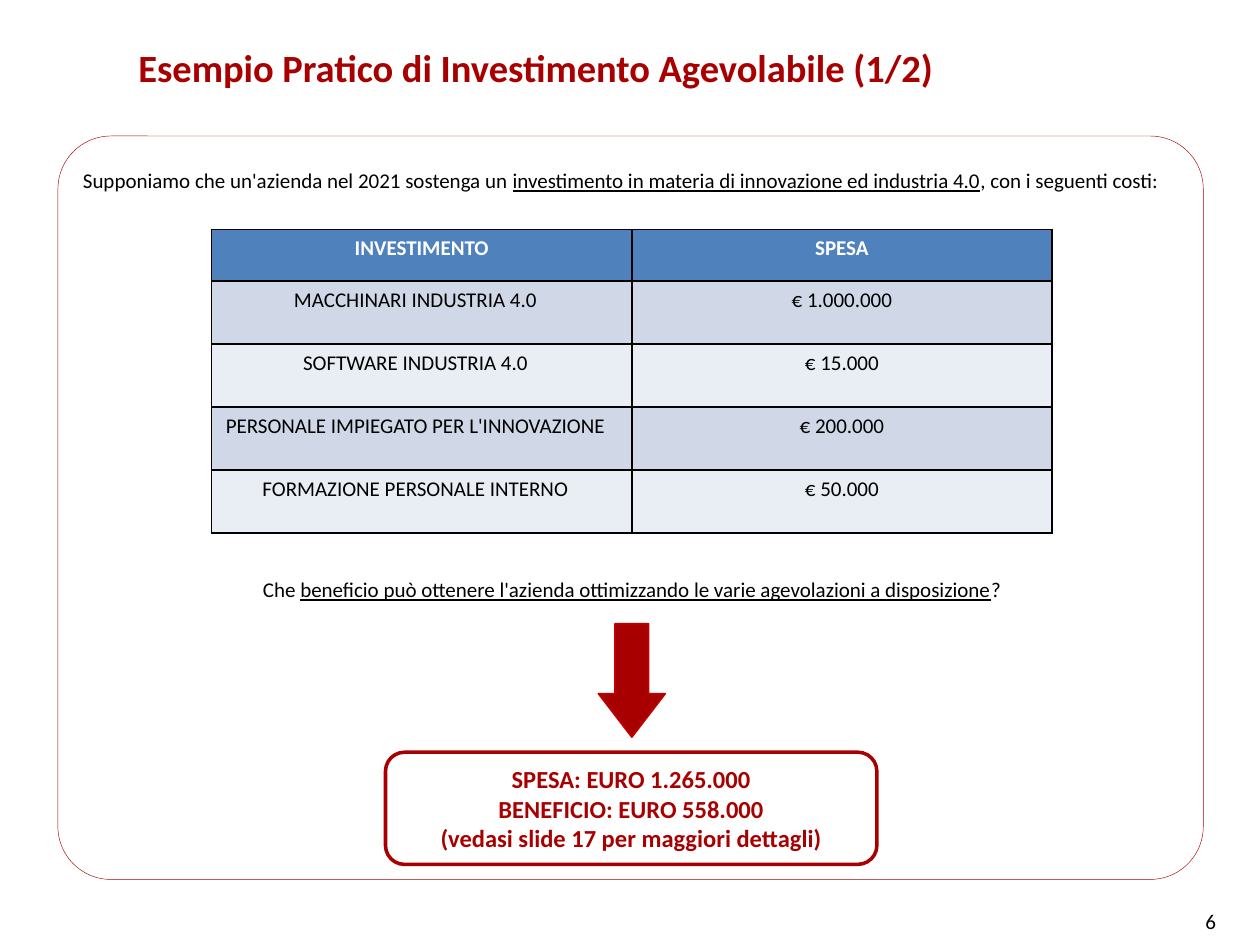
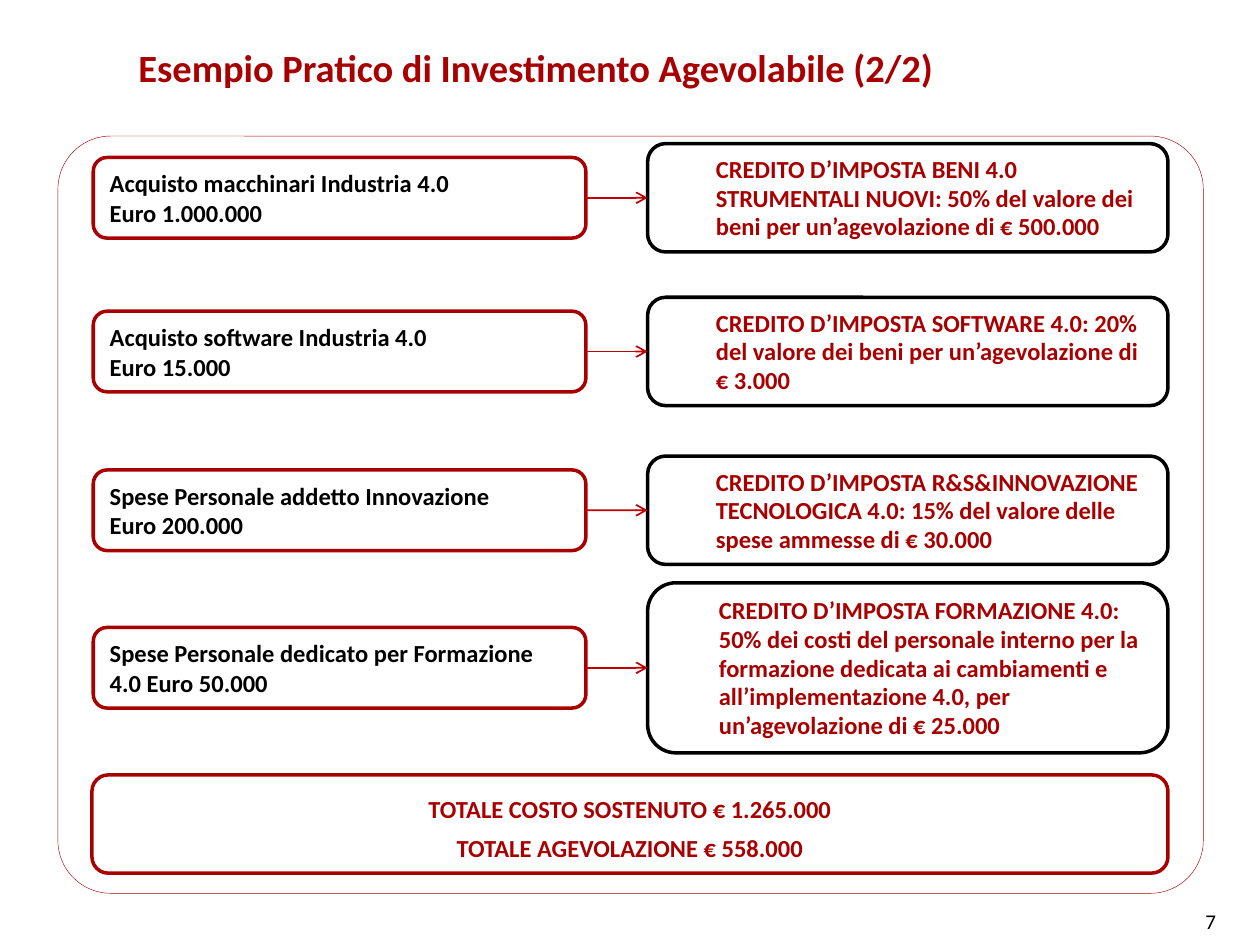
from lxml import etree
from pptx import Presentation
from pptx.dml.color import RGBColor
from pptx.enum import shapes, text
from pptx.oxml import ns
from pptx.util import Inches, Pt

FONT = "Calibri"
RED = RGBColor(0xA8, 0x00, 0x00)
ARROW_RED = RGBColor(0xC0, 0x00, 0x00)
BLACK = RGBColor(0, 0, 0)
WHITE = RGBColor(255, 255, 255)
HEADER_BLUE = RGBColor(0x4F, 0x81, 0xBD)
BANDS = RGBColor(0xE9, 0xED, 0xF4), RGBColor(0xD0, 0xD8, 0xE8)

LEFT, CENTER, RIGHT = text.PP_ALIGN.LEFT, text.PP_ALIGN.CENTER, text.PP_ALIGN.RIGHT
TOP, MIDDLE = text.MSO_ANCHOR.TOP, text.MSO_ANCHOR.MIDDLE
ROUNDED = shapes.MSO_SHAPE.ROUNDED_RECTANGLE

TITLE = "Esempio Pratico di Investimento Agevolabile ({}/2)"
# Underlined words stand between bars.
INTRO = ("Supponiamo che un'azienda nel 2021 sostenga un |investimento in materia di "
         "innovazione ed industria 4.0|, con i seguenti costi:")
QUESTION = ("Che |beneficio può ottenere l'azienda ottimizzando le varie agevolazioni "
            "a disposizione|?")
COSTS = [
    ("INVESTIMENTO", "SPESA"),
    ("MACCHINARI INDUSTRIA 4.0", "€ 1.000.000"),
    ("SOFTWARE INDUSTRIA 4.0", "€ 15.000"),
    ("PERSONALE IMPIEGATO PER L'INNOVAZIONE", "€ 200.000"),
    ("FORMAZIONE PERSONALE INTERNO", "€ 50.000"),
]
SUMMARY = ("SPESA: EURO 1.265.000\nBENEFICIO: EURO 558.000\n"
           "(vedasi slide 17 per maggiori dettagli)")
TOTALS = "TOTALE COSTO SOSTENUTO € 1.265.000\nTOTALE AGEVOLAZIONE € 558.000"

# Row middle, expense, height of the credit box, credit
CREDITS = [
    (1.57, "Acquisto macchinari Industria 4.0\nEuro 1.000.000", 0.86,
     "CREDITO D’IMPOSTA BENI 4.0 STRUMENTALI NUOVI: 50% del valore dei beni "
     "per un’agevolazione di € 500.000"),
    (2.79, "Acquisto software Industria 4.0\nEuro 15.000", 0.86,
     "CREDITO D’IMPOSTA SOFTWARE 4.0: 20% del valore dei beni "
     "per un’agevolazione di € 3.000"),
    (4.05, "Spese Personale addetto Innovazione\nEuro 200.000", 0.86,
     "CREDITO D’IMPOSTA R&S&INNOVAZIONE TECNOLOGICA 4.0: 15% del valore delle "
     "spese ammesse\u00a0di € 30.000"),
    (5.30, "Spese Personale dedicato per Formazione 4.0 Euro 50.000", 1.35,
     "CREDITO D’IMPOSTA FORMAZIONE 4.0: 50% dei costi del personale interno per la "
     "formazione dedicata ai cambiamenti e all’implementazione 4.0, "
     "per un’agevolazione di € 25.000"),
]
EXPENSE_LEFT, EXPENSE_WIDTH, EXPENSE_HEIGHT = 0.74, 3.91, 0.64
CREDIT_LEFT, CREDIT_WIDTH = 5.14, 4.13


def write(frame, words, size, color=BLACK, bold=False, align=LEFT, anchor=TOP):
    """Write one paragraph a line; every second piece between bars is underlined."""
    frame.word_wrap = True
    frame.vertical_anchor = anchor
    for index, line in enumerate(words.split("\n")):
        para = frame.add_paragraph() if index else frame.paragraphs[0]
        para.alignment = align
        for number, piece in enumerate(line.split("|")):
            span = para.add_run()
            span.text = piece
            font = span.font
            font.name, font.size, font.bold = FONT, Pt(size), bold
            font.color.rgb = color
            if number % 2:
                font.underline = True


def add_text(page, place, words, size, **style):
    box = page.shapes.add_textbox(*map(Inches, place))
    write(box.text_frame, words, size, **style)


def add_figure(page, kind, place, fill=None, line=None, width=1):
    figure = page.shapes.add_shape(kind, *map(Inches, place))
    figure.shadow.inherit = False
    if fill is None:
        figure.fill.background()
    else:
        figure.fill.solid()
        figure.fill.fore_color.rgb = fill
    figure.line.color.rgb = line
    figure.line.width = Pt(width)
    return figure


def add_rounded(page, place, radius, line=RED, width=2):
    box = add_figure(page, ROUNDED, place, line=line, width=width)
    box.adjustments[0] = radius / min(place[2:])
    return box


def add_page(deck, part, number, frame_height):
    """Add a slide with the title, page number and thin outer frame."""
    page = deck.slides.add_slide(deck.slide_layouts[6])
    add_text(page, (1, 0.19, 7.69, 0.69), TITLE.format(part), 22,
             color=RED, bold=True, anchor=MIDDLE)
    add_text(page, (7.18, 7.15, 2.57, 0.32), str(number), 12, align=RIGHT, anchor=MIDDLE)
    add_rounded(page, (0.46, 1.08, 9.09, frame_height), 0.42, width=0.25)
    return page


def border(cell):
    properties = cell._tc.get_or_add_tcPr()
    for index, side in enumerate(("lnL", "lnR", "lnT", "lnB")):
        edge = etree.Element(ns.qn("a:" + side), w=str(Pt(1)))
        paint = etree.SubElement(edge, ns.qn("a:solidFill"))
        etree.SubElement(paint, ns.qn("a:srgbClr"), val=str(BLACK))
        properties.insert(index, edge)


def add_costs(page):
    heights = [0.41] + [0.5] * (len(COSTS) - 1)
    table = page.shapes.add_table(len(COSTS), 2, Inches(1.68), Inches(1.82),
                                  Inches(6.67), Inches(sum(heights))).table
    for row, (entries, height) in enumerate(zip(COSTS, heights)):
        table.rows[row].height = Inches(height)
        for column, words in enumerate(entries):
            cell = table.cell(row, column)
            if row and not column:
                cell.margin_left, cell.margin_right = Inches(0.05), Inches(0.15)
            cell.fill.solid()
            cell.fill.fore_color.rgb = BANDS[row % 2] if row else HEADER_BLUE
            border(cell)
            write(cell.text_frame, words, 12, color=BLACK if row else WHITE,
                  bold=row == 0, align=CENTER)


def join(page, start, end):
    link = page.shapes.add_connector(shapes.MSO_CONNECTOR.STRAIGHT, 0, 0, 0, 0)
    link.begin_connect(start, 3)
    link.end_connect(end, 1)
    link.line.color.rgb = ARROW_RED
    link.line.width = Pt(1)
    etree.SubElement(link.line._get_or_add_ln(), ns.qn("a:tailEnd"), type="arrow")
    etree.SubElement(link._element.spPr, ns.qn("a:effectLst"))


def build_costs_page(deck):
    page = add_page(deck, 1, 6, 5.9)
    add_text(page, (0.56, 1.28, 8.87, 0.3), INTRO, 12)
    add_costs(page)
    add_text(page, (0.58, 4.53, 8.87, 0.3), QUESTION, 12, align=CENTER)
    arrow = add_figure(page, shapes.MSO_SHAPE.DOWN_ARROW, (4.75, 4.95, 0.53, 0.9),
                       RED, ARROW_RED)
    arrow.adjustments[1] = 0.65
    summary = add_rounded(page, (3.06, 5.97, 3.9, 0.89), 0.15)
    write(summary.text_frame, SUMMARY, 14, color=RED, bold=True,
          align=CENTER, anchor=MIDDLE)


def build_credits_page(deck):
    page = add_page(deck, 2, 7, 6.01)
    for middle, expense_words, height, credit_words in CREDITS:
        expense = add_rounded(page, (EXPENSE_LEFT, middle - EXPENSE_HEIGHT / 2,
                                     EXPENSE_WIDTH, EXPENSE_HEIGHT), 0.11)
        write(expense.text_frame, expense_words, 14, bold=True, anchor=MIDDLE)
        credit = add_rounded(page, (CREDIT_LEFT, middle - height / 2,
                                    CREDIT_WIDTH, height), height / 6, line=BLACK)
        write(credit.text_frame, credit_words, 14, color=RED, bold=True, anchor=MIDDLE)
        credit.text_frame.margin_left = Inches(0.5)
        credit.text_frame.paragraphs[0].line_spacing = Pt(16.4)
        join(page, expense, credit)
    totals = add_rounded(page, (0.73, 6.15, 8.54, 0.78), 0.13)
    write(totals.text_frame, TOTALS, 14, color=RED, bold=True,
          align=CENTER, anchor=MIDDLE)
    for para in totals.text_frame.paragraphs:
        para.line_spacing = Pt(21.2)
    totals.text_frame.paragraphs[1].space_before = Pt(1)


def main():
    deck = Presentation()
    deck.slide_width, deck.slide_height = Inches(10), Inches(7.5)
    build_costs_page(deck)
    build_credits_page(deck)
    deck.save("out.pptx")


if __name__ == "__main__":
    main()
